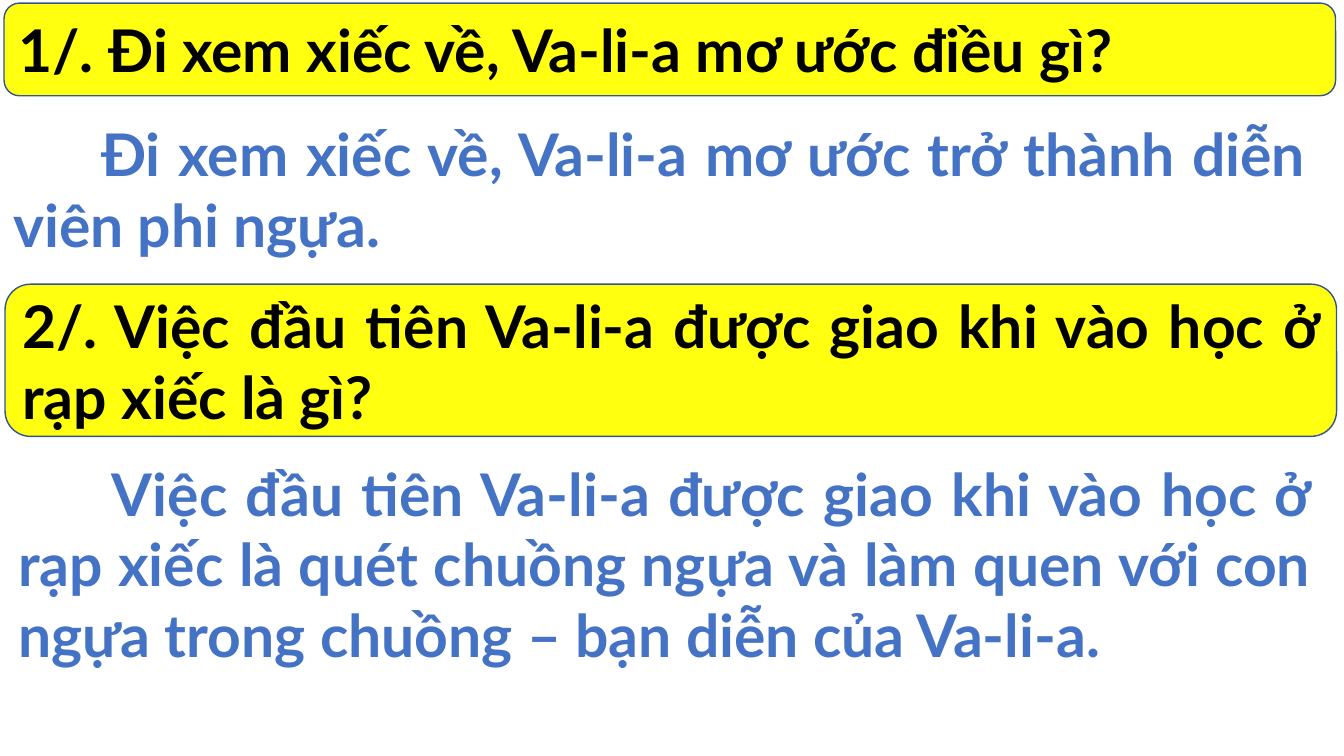
from dataclasses import dataclass

from lxml import etree
from pptx import Presentation
from pptx import util as u
from pptx.dml.color import RGBColor
from pptx.enum import shapes, text
from pptx.oxml import ns


@dataclass(frozen=True)
class Theme:
    font: str = "Lato"
    size: float = 42
    question_color: str = "000000"
    answer_color: str = "4472C4"
    banner_fill: str = "FFFF00"
    banner_opacity: int = 94
    banner_line: str = "325491"
    line_width: float = 1
    banner_width: float = 951.1
    answer_width: float = 937.4


class QuizSlide:
    def __init__(self, slide, theme):
        self.slide = slide
        self.theme = theme

    def add_wording(self, frame, wording, color, indent=0):
        """Fill a frame with one justified paragraph."""
        frame.word_wrap = True
        paragraph = frame.paragraphs[0]
        paragraph.alignment = text.PP_ALIGN.JUSTIFY
        if indent:
            properties = paragraph._p.get_or_add_pPr()
            properties.set("marL", "0")
            properties.set("indent", str(u.Pt(indent)))
        run = paragraph.add_run()
        run.text = wording
        run.font.name = self.theme.font
        run.font.size = u.Pt(self.theme.size)
        run.font.bold = True
        run.font.color.rgb = RGBColor.from_string(color)

    def question(self, wording, left, top, height):
        """Rounded banner with a slightly transparent fill."""
        theme = self.theme
        banner = self.slide.shapes.add_shape(
            shapes.MSO_SHAPE.ROUNDED_RECTANGLE,
            u.Pt(left), u.Pt(top), u.Pt(theme.banner_width), u.Pt(height))
        banner.shadow.inherit = False
        banner.fill.solid()
        banner.fill.fore_color.rgb = RGBColor.from_string(theme.banner_fill)
        fill_color = banner._element.spPr.find(
            ns.qn("a:solidFill")).find(ns.qn("a:srgbClr"))
        alpha = etree.SubElement(fill_color, ns.qn("a:alpha"))
        alpha.set("val", str(theme.banner_opacity * 1000))
        banner.line.color.rgb = RGBColor.from_string(theme.banner_line)
        banner.line.width = u.Pt(theme.line_width)
        banner.text_frame.vertical_anchor = text.MSO_ANCHOR.MIDDLE
        self.add_wording(banner.text_frame, wording, theme.question_color)

    def answer(self, wording, left, top, height, indent):
        """Plain text with an indented first line."""
        box = self.slide.shapes.add_textbox(
            u.Pt(left), u.Pt(top), u.Pt(self.theme.answer_width), u.Pt(height))
        box.text_frame.auto_size = text.MSO_AUTO_SIZE.SHAPE_TO_FIT_TEXT
        self.add_wording(box.text_frame, wording, self.theme.answer_color,
                         indent)


def main():
    deck = Presentation()
    deck.slide_width, deck.slide_height = u.Pt(960), u.Pt(540)
    quiz = QuizSlide(deck.slides.add_slide(deck.slide_layouts[6]), Theme())

    # First question and answer
    quiz.answer("Đi xem xiếc về, Va-li-a mơ ước trở thành diễn viên phi ngựa.",
                left=2.2, top=80.6, height=108.7, indent=63)
    quiz.question("1/. Đi xem xiếc về, Va-li-a mơ ước điều gì?",
                  left=2.9, top=2.2, height=66.2)

    # Second question and answer
    quiz.answer("Việc đầu tiên Va-li-a được giao khi vào học ở rạp xiếc là "
                "quét chuồng ngựa và làm quen với con ngựa trong chuồng – "
                "bạn diễn của Va-li-a.",
                left=5.8, top=323.3, height=211, indent=67)
    quiz.question("2/. Việc đầu tiên Va-li-a được giao khi vào học ở rạp xiếc "
                  "là gì?", left=3.6, top=203, height=108.7)

    deck.save("out.pptx")


if __name__ == "__main__":
    main()
